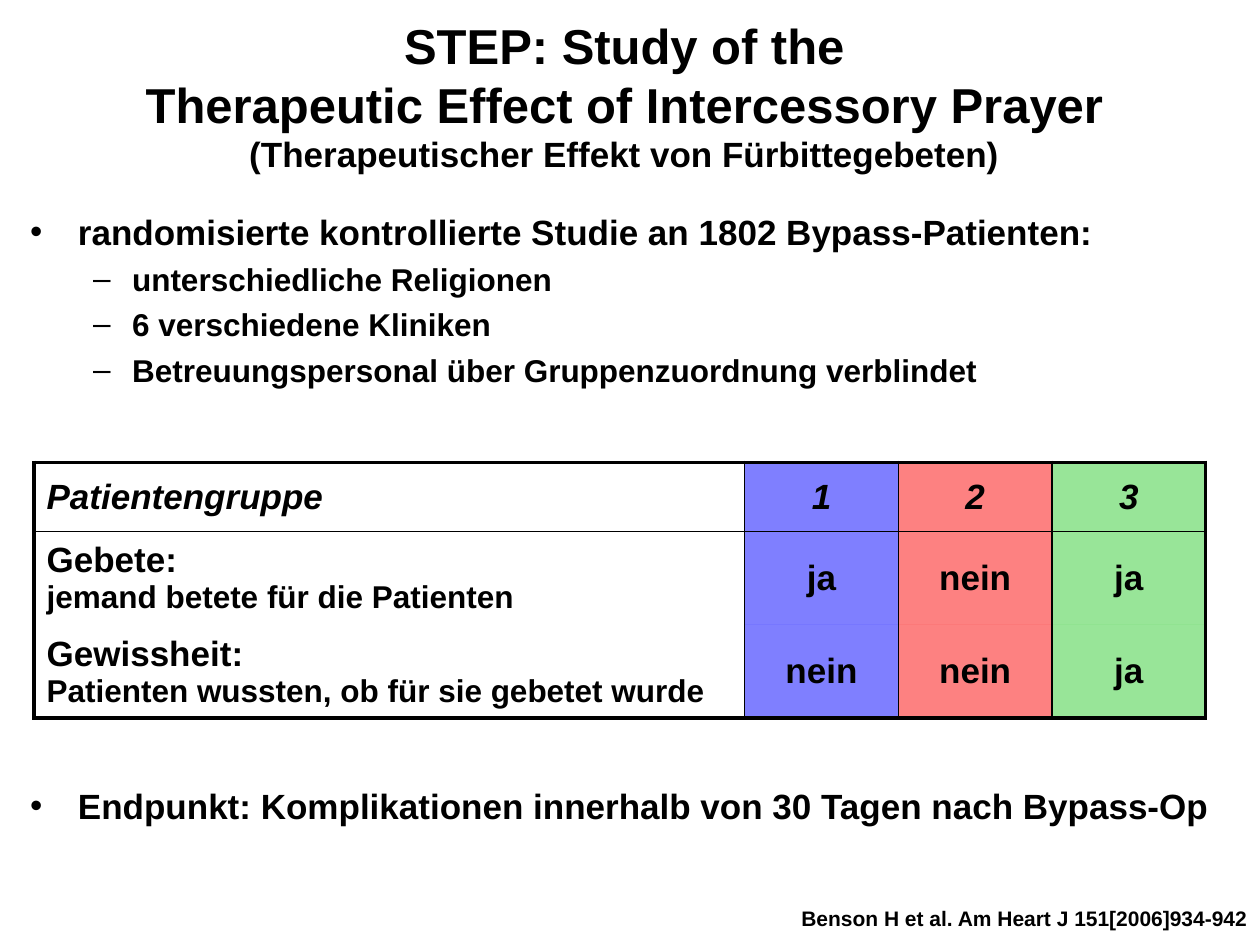
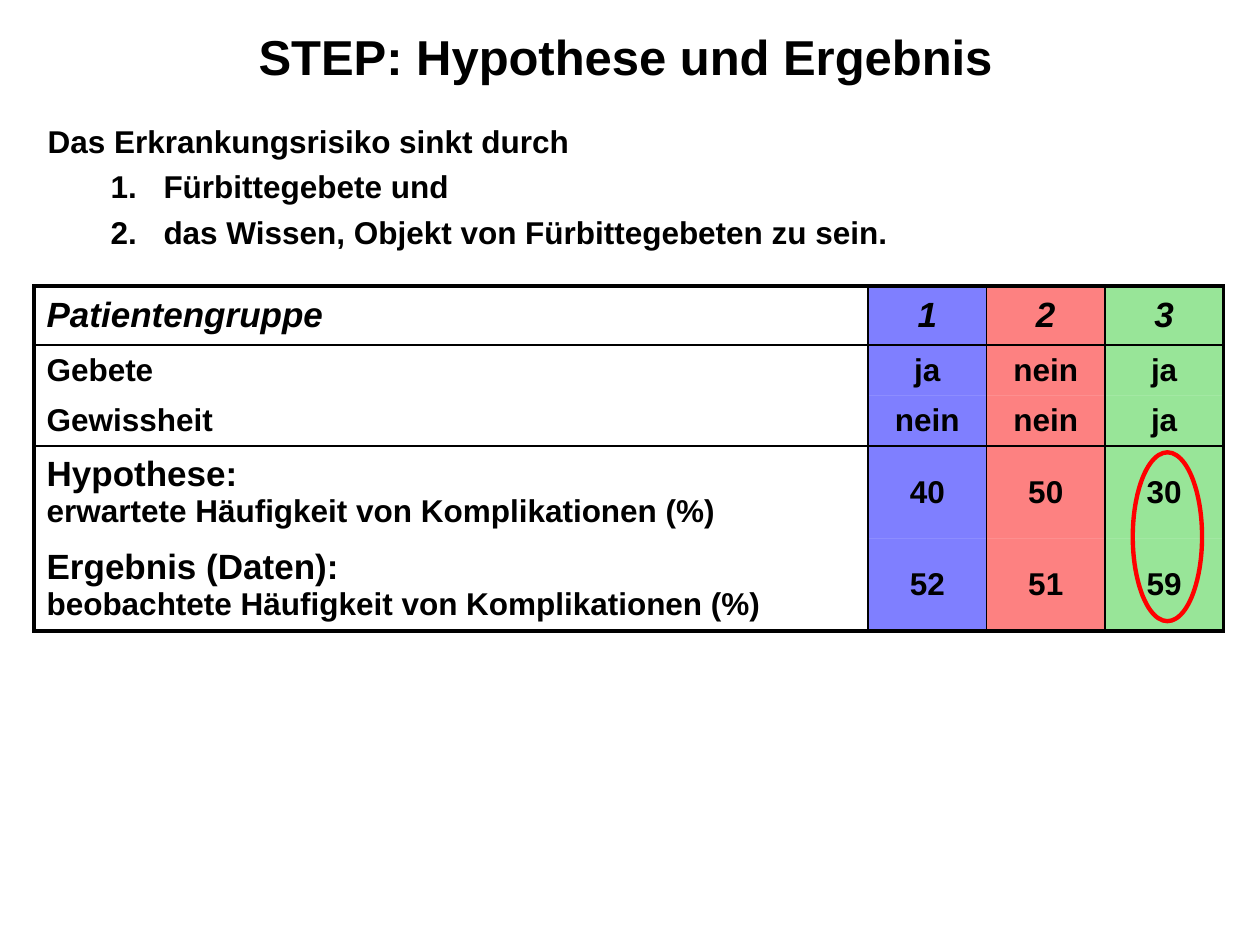
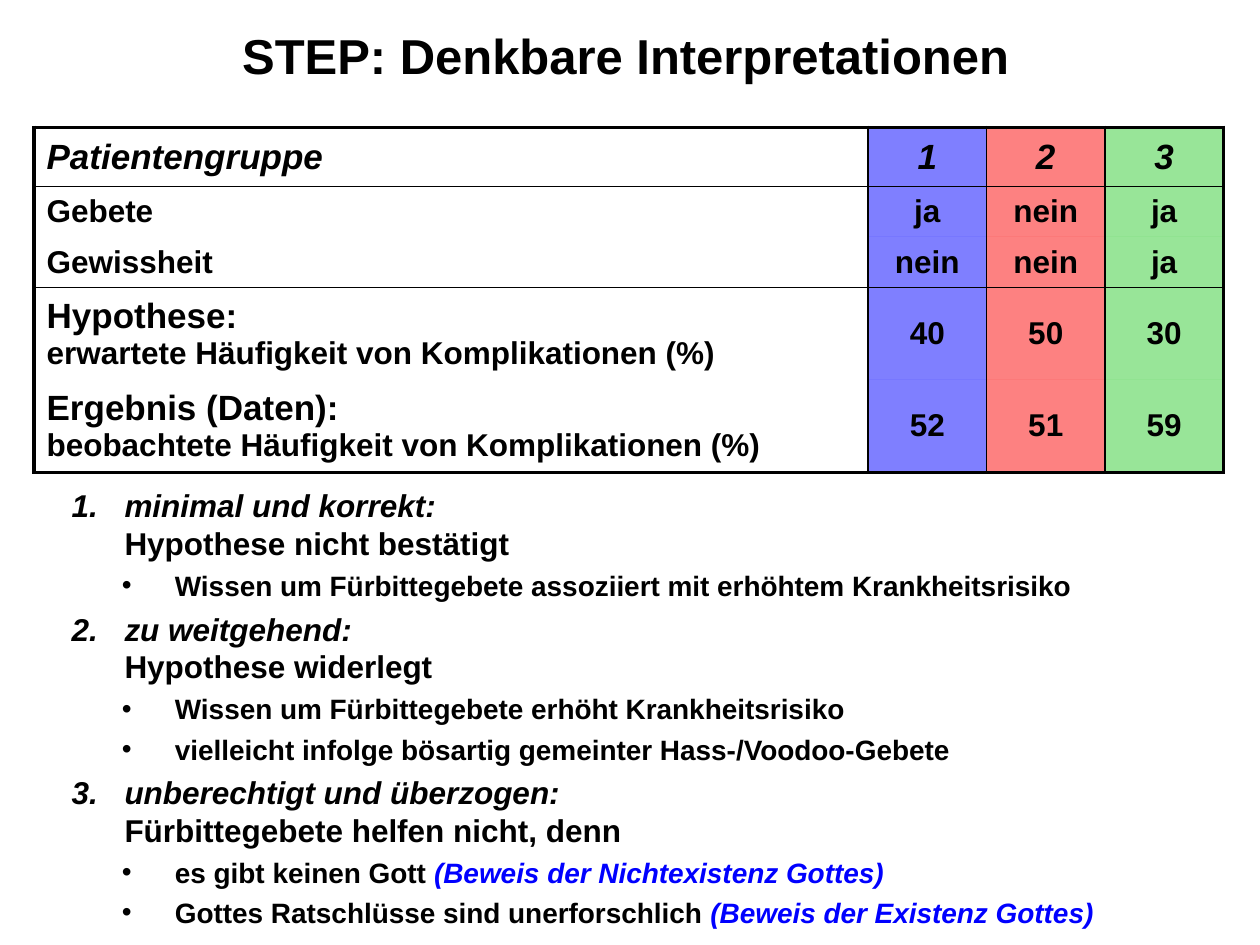
from lxml import etree
from pptx import Presentation
from pptx.dml.color import RGBColor
from pptx.enum.shapes import MSO_SHAPE
from pptx.enum.text import MSO_ANCHOR, PP_ALIGN
from pptx.oxml.ns import qn
from pptx.util import Inches, Pt

LEFT, MID, RIGHT = PP_ALIGN.LEFT, PP_ALIGN.CENTER, PP_ALIGN.RIGHT
TOP, CENTER = MSO_ANCHOR.TOP, MSO_ANCHOR.MIDDLE
OVAL = MSO_SHAPE.OVAL
FONT, BLACK, BLUE, RED = "Arial", "000000", "0000FF", "FF0000"
FILLS = [None, BLUE, "FC0404", "33CC33"]
THIN, THICK = 1, 2.25

PLAIN = (0, 0, 0, None)
DOT = (0, 0.38, -0.38, "•")
DASH = (1, 0.81, -0.31, "–")
STEP = (1, 0.92, -0.42, "1.")
CLAIM = (1, 0.61, -0.42, "1.")
NOTE = (2, 1.01, -0.42, "•")


def write(frame, paras, align=LEFT, anchor=TOP):
    frame.word_wrap = True
    frame.vertical_anchor = anchor
    for i, (style, runs) in enumerate(paras):
        level, left, indent, mark = style
        para = frame.add_paragraph() if i else frame.paragraphs[0]
        para.alignment = align
        para.level = level
        if i:
            para.space_before = Pt(round(runs[0][1] * 0.24, 1))
        if mark:
            props = para._p.get_or_add_pPr()
            props.set("marL", str(Inches(left)))
            props.set("indent", str(Inches(indent)))
            etree.SubElement(props, qn("a:buFont"), typeface=FONT)
            if mark == "1.":
                etree.SubElement(props, qn("a:buAutoNum"), type="arabicPeriod")
            else:
                etree.SubElement(props, qn("a:buChar"), char=mark)
        for text, size, *look in runs:
            run = para.add_run()
            run.text = text.rstrip("\n")
            font = run.font
            font.name, font.size, font.bold = FONT, Pt(size), True
            font.italic = bool(look)
            font.color.rgb = RGBColor.from_string(look[0] if look else BLACK)
            if text.endswith("\n"):
                para.add_line_break()


def edge(cell, spot, side, width):
    line = etree.Element(qn("a:ln" + side), w=str(Pt(width)))
    if width:
        fill = etree.SubElement(line, qn("a:solidFill"))
        etree.SubElement(fill, qn("a:srgbClr"), val=BLACK)
    else:
        etree.SubElement(line, qn("a:noFill"))
    cell._tc.get_or_add_tcPr().insert(spot, line)


deck = Presentation()
deck.slide_width, deck.slide_height = Inches(10), Inches(7.5)
pages = [deck.slides.add_slide(deck.slide_layouts[6]) for _ in range(3)]

titles = [
    (0.27, 0.13, 1.25, [("STEP: Study of the\n", 28),
                        ("Therapeutic Effect of Intercessory Prayer\n", 28),
                        ("(Therapeutischer Effekt von Fürbittegebeten)", 20)]),
    (0.28, 0.01, 0.87, [("STEP: Hypothese und Ergebnis", 28)]),
    (0.28, 0, 0.87, [("STEP: Denkbare Interpretationen", 28)]),
]
for page, (x, y, high, runs) in zip(pages, titles):
    box = page.shapes.add_textbox(Inches(x), Inches(y), Inches(9.37), Inches(high))
    write(box.text_frame, [(PLAIN, runs)], MID, CENTER)

texts = [
    (0, (0.14, 1.62, 9.61, 1.6), LEFT, [
        (DOT, [("randomisierte kontrollierte Studie an 1802 Bypass-Patienten:", 20)]),
        (DASH, [("unterschiedliche Religionen", 18)]),
        (DASH, [("6 verschiedene Kliniken", 18)]),
        (DASH, [("Betreuungspersonal über Gruppenzuordnung verblindet", 18)]),
    ]),
    (0, (0.14, 6.18, 9.61, 0.82), LEFT, [
        (DOT, [("Endpunkt: Komplikationen innerhalb von 30 Tagen nach Bypass-Op", 20)]),
    ]),
    (0, (5.79, 7.14, 4.21, 0.3), RIGHT, [
        (PLAIN, [("Benson H et al. Am Heart J 151[2006]934-942", 12)]),
    ]),
    (1, (0.28, 0.92, 9.47, 1.18), LEFT, [
        (PLAIN, [("Das Erkrankungsrisiko sinkt durch", 18)]),
        (STEP, [("Fürbittegebete und", 18)]),
        (STEP, [("das Wissen, Objekt von Fürbittegebeten zu sein.", 18)]),
    ]),
    (2, (0.28, 3.81, 9.45, 3.66), LEFT, [
        (CLAIM, [("minimal und korrekt:\n", 18, BLACK), ("Hypothese nicht bestätigt", 18)]),
        (NOTE, [("Wissen um Fürbittegebete assoziiert mit erhöhtem Krankheitsrisiko", 16)]),
        (CLAIM, [("zu weitgehend:\n", 18, BLACK), ("Hypothese widerlegt", 18)]),
        (NOTE, [("Wissen um Fürbittegebete erhöht Krankheitsrisiko", 16)]),
        (NOTE, [("vielleicht infolge bösartig gemeinter Hass-/Voodoo-Gebete", 16)]),
        (CLAIM, [("unberechtigt und überzogen:\n", 18, BLACK),
                 ("Fürbittegebete helfen nicht, denn", 18)]),
        (NOTE, [("es gibt keinen Gott ", 16),
                ("(Beweis der Nichtexistenz Gottes)", 16, BLUE)]),
        (NOTE, [("Gottes Ratschlüsse sind unerforschlich ", 16),
                ("(Beweis der Existenz Gottes)", 16, BLUE)]),
    ]),
]
for num, at, align, paras in texts:
    box = pages[num].shapes.add_textbox(*map(Inches, at))
    write(box.text_frame, paras, align)

head = ([("Patientengruppe", 20, BLACK)], [(n, 20, BLACK) for n in "123"])
groups = [
    head,
    ([("Gebete:\n", 20), ("jemand betete für die Patienten", 18)],
     [(word, 20) for word in ("ja", "nein", "ja")]),
    ([("Gewissheit:\n", 20), ("Patienten wussten, ob für sie gebetet wurde", 18)],
     [(word, 20) for word in ("nein", "nein", "ja")]),
]
results = [
    head,
    ([("Gebete", 18)], [(word, 18) for word in ("ja", "nein", "ja")]),
    ([("Gewissheit", 18)], [(word, 18) for word in ("nein", "nein", "ja")]),
    ([("Hypothese:\n", 20), ("erwartete Häufigkeit von Komplikationen (%)", 18)],
     [(word, 18) for word in ("40", "50", "30")]),
    ([("Ergebnis (Daten):\n", 20), ("beobachtete Häufigkeit von Komplikationen (%)", 18)],
     [(word, 18) for word in ("52", "51", "59")]),
]
tall = [0.47, 0.38, 0.38, 0.69, 0.69]
grids = [
    (3.67, [5.64] + [1.22] * 3, [0.55, 0.74, 0.74], groups),
    (2.27, [6.62] + [0.94] * 3, tall, results),
    (1.01, [6.62] + [0.94] * 3, tall, results),
]
for page, (y, wide, high, rows) in zip(pages, grids):
    frame = page.shapes.add_table(len(high), len(wide), Inches(0.27), Inches(y),
                                  Inches(sum(wide)), Inches(sum(high)))
    table = frame.table
    for col, size in zip(table.columns, wide):
        col.width = Inches(size)
    for row, size in zip(table.rows, high):
        row.height = Inches(size)
    cuts = {0: THICK, 1: THIN, 3: THIN, len(rows): THICK}
    for r, (label, marks) in enumerate(rows):
        for c, runs in enumerate([label] + [[mark] for mark in marks]):
            cell = table.cell(r, c)
            write(cell.text_frame, [(PLAIN, runs)], MID if c else LEFT)
            cell.vertical_anchor = CENTER
            if c:
                cell.fill.solid()
                cell.fill.fore_color.rgb = RGBColor.from_string(FILLS[c])
                tint = cell._tc.tcPr.find(".//" + qn("a:srgbClr"))
                etree.SubElement(tint, qn("a:alpha"), val="50000")
            else:
                cell.fill.background()
            sides = [("L", THIN if c else THICK), ("R", THIN if c < 3 else THICK),
                     ("T", cuts.get(r, 0)), ("B", cuts.get(r + 1, 0))]
            for spot, (side, width) in enumerate(sides):
                edge(cell, spot, side, width)

ring = pages[1].shapes.add_shape(OVAL, Inches(8.99), Inches(3.59), Inches(0.55), Inches(1.34))
ring.shadow.inherit = False
ring.fill.background()
ring.line.color.rgb = RGBColor.from_string(RED)
ring.line.width = Pt(2.5)

deck.save("out.pptx")
